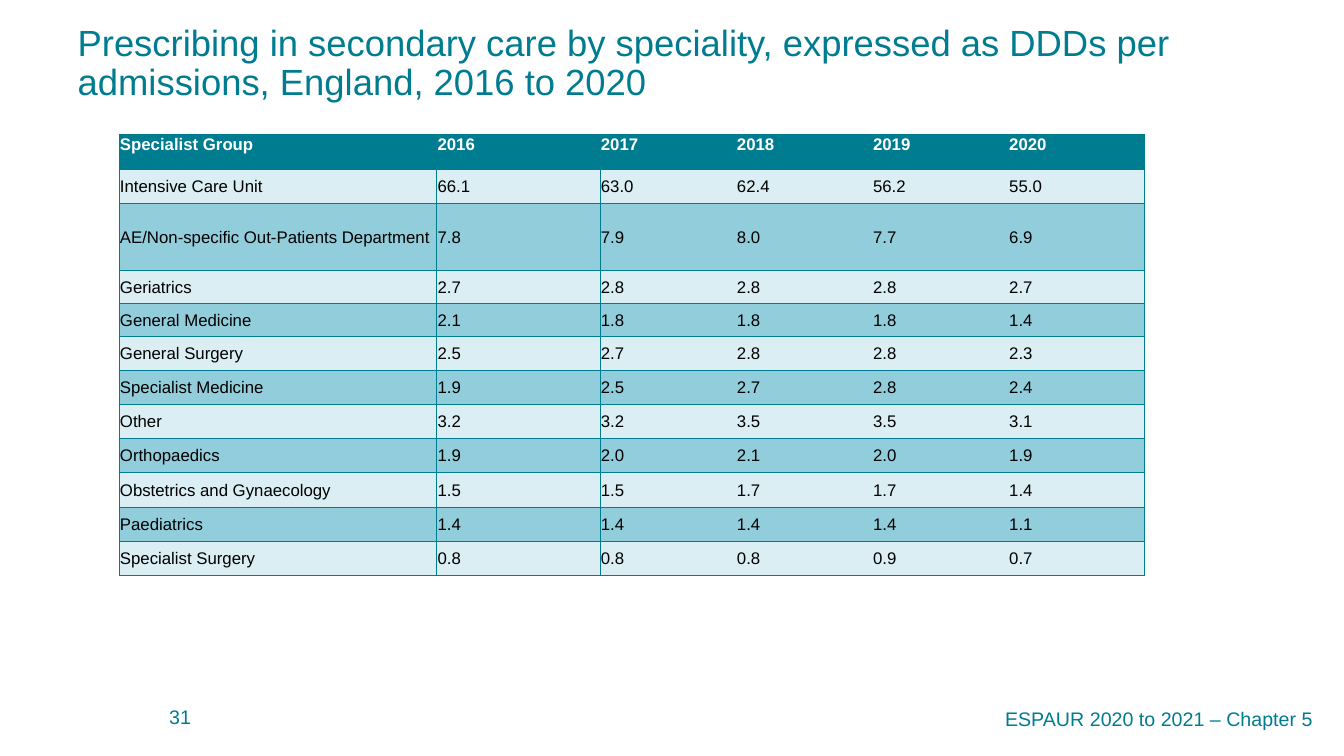
from dataclasses import dataclass

from lxml.etree import SubElement
from pptx import Presentation
from pptx.dml.color import RGBColor as RGB
from pptx.enum.text import MSO_ANCHOR as ANCHOR, MSO_AUTO_SIZE as AUTO, PP_ALIGN as ALIGN
from pptx.oxml.ns import qn

EMU_PER_PX = 9144  # 100 px to the inch
NO_STYLE = "{2D5ABB26-0587-4C30-8999-92F81FD0307C}"
BORDER_EMU = 6350


def px(n):
    return n * EMU_PER_PX


@dataclass(frozen=True)
class Theme:
    font: str = "Arial"
    teal: str = "007C91"
    white: str = "FFFFFF"
    black: str = "000000"
    bands: tuple = ("DAEEF3", "92CDDC")
    title_size: int = 26
    footer_size: int = 14
    cell_size: int = 12


class SlideBuilder:
    def __init__(self, prs, theme):
        self.theme = theme
        self.slide = prs.slides.add_slide(prs.slide_layouts[5])

    def format_runs(self, p, size, colour, bold=False):
        for r in p.runs:
            r.font.name = self.theme.font
            r.font.size = size * 12700
            r.font.bold = bold
            r.font.color.rgb = RGB.from_string(colour)

    def title(self, text, left, top, width, height):
        sp = self.slide.shapes.title
        sp.left, sp.top, sp.width, sp.height = map(px, (left, top, width, height))
        tf = sp.text_frame
        tf.text = text
        tf.word_wrap = True
        tf.auto_size = AUTO.NONE
        tf.vertical_anchor = ANCHOR.TOP
        p = tf.paragraphs[0]
        p.alignment = ALIGN.LEFT
        p.line_spacing = 0.9
        self.format_runs(p, self.theme.title_size, self.theme.teal)

    def footer(self, text, left, top, width, height, align=ALIGN.LEFT, indent=0):
        sp = self.slide.shapes.add_textbox(*map(px, (left, top, width, height)))
        tf = sp.text_frame
        tf.text = text
        tf.word_wrap = True
        tf.vertical_anchor = ANCHOR.MIDDLE
        p = tf.paragraphs[0]
        p.alignment = align
        if indent:
            p._p.get_or_add_pPr().set("marL", str(px(indent)))
        self.format_runs(p, self.theme.footer_size, self.theme.teal)

    def table(self, rows, left, top, widths, heights):
        frame = self.slide.shapes.add_table(
            len(rows), len(widths), px(left), px(top), px(sum(widths)), px(sum(heights)))
        table = frame.table
        table.first_row = table.horz_banding = False
        table._tbl.tblPr.find(qn("a:tableStyleId")).text = NO_STYLE
        for column, width in zip(table.columns, widths):
            column.width = px(width)
        for row, height in zip(table.rows, heights):
            row.height = px(height)
        last = len(widths) - 1
        for i, values in enumerate(rows):
            for j, value in enumerate(values):
                header = i == 0
                fill = self.theme.teal if header else self.theme.bands[(i - 1) % 2]
                sides = "TB"
                if header or j <= 1:
                    sides += "L"
                if header or j in (0, last):
                    sides += "R"
                self.cell(table.cell(i, j), value, fill, sides, header)

    def cell(self, cell, text, fill, sides, header):
        cell.text_frame.text = text
        cell.margin_left = cell.margin_right = cell.margin_top = px(1)
        cell.margin_bottom = 0
        cell.vertical_anchor = ANCHOR.TOP if header else ANCHOR.MIDDLE
        colour = self.theme.white if header else self.theme.black
        self.format_runs(cell.text_frame.paragraphs[0], self.theme.cell_size, colour, header)
        self.borders(cell, sides)
        cell.fill.solid()
        cell.fill.fore_color.rgb = RGB.from_string(fill)

    def borders(self, cell, sides):
        """Draw the sides named by letter; must run before the cell is filled."""
        tc_pr = cell._tc.get_or_add_tcPr()
        for side in "LRTB":
            if side in sides:
                ln = SubElement(tc_pr, qn(f"a:ln{side}"), w=str(BORDER_EMU))
                solid = SubElement(ln, qn("a:solidFill"))
                SubElement(solid, qn("a:srgbClr"), val=self.theme.teal)


ROWS = [
    ("Specialist Group", "2016", "2017", "2018", "2019", "2020"),
    ("Intensive Care Unit", "66.1", "63.0", "62.4", "56.2", "55.0"),
    ("AE/Non-specific Out-Patients Department", "7.8", "7.9", "8.0", "7.7", "6.9"),
    ("Geriatrics", "2.7", "2.8", "2.8", "2.8", "2.7"),
    ("General Medicine", "2.1", "1.8", "1.8", "1.8", "1.4"),
    ("General Surgery", "2.5", "2.7", "2.8", "2.8", "2.3"),
    ("Specialist Medicine", "1.9", "2.5", "2.7", "2.8", "2.4"),
    ("Other", "3.2", "3.2", "3.5", "3.5", "3.1"),
    ("Orthopaedics", "1.9", "2.0", "2.1", "2.0", "1.9"),
    ("Obstetrics and Gynaecology", "1.5", "1.5", "1.7", "1.7", "1.4"),
    ("Paediatrics", "1.4", "1.4", "1.4", "1.4", "1.1"),
    ("Specialist Surgery", "0.8", "0.8", "0.8", "0.9", "0.7"),
]


def main():
    prs = Presentation()
    prs.slide_width, prs.slide_height = px(1333), px(750)
    s = SlideBuilder(prs, Theme())
    s.title("Prescribing in secondary care by speciality, expressed as DDDs per "
            "admissions, England, 2016 to 2020", 67, 20, 1217, 106)
    s.table(ROWS, 118, 133, [315, 162] + [135] * 4, [35, 34, 66] + [33] * 3 + [34] * 6)
    s.footer("ESPAUR 2020 to 2021 – Chapter 5", 14, 682, 1298, 62, align=ALIGN.RIGHT)
    s.footer("31", 89, 691, 1094, 40, indent=69)
    prs.save("out.pptx")


if __name__ == "__main__":
    main()
